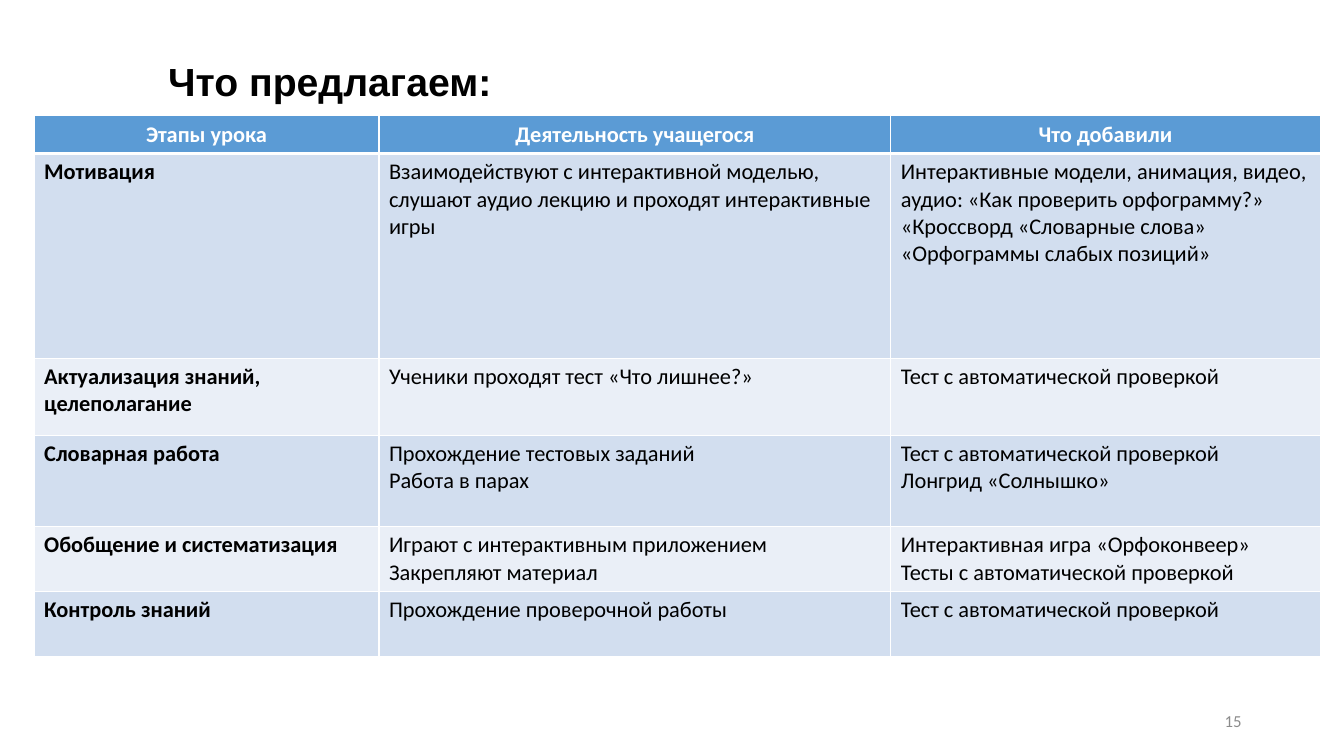
from lxml import etree
from pptx import Presentation
from pptx.dml.color import RGBColor
from pptx.enum import text
from pptx.oxml import ns
from pptx.util import Cm, Pt

BLACK = RGBColor(0x00, 0x00, 0x00)
WHITE = RGBColor(0xFF, 0xFF, 0xFF)
GRAY = RGBColor(0x8C, 0x8C, 0x8C)
HEADER_BLUE = RGBColor(0x5B, 0x9B, 0xD5)
BANDS = (RGBColor(0xEA, 0xEF, 0xF7), RGBColor(0xD2, 0xDE, 0xEF))

COLUMN_WIDTHS = (8.69, 12.9, 10.82)
ROW_HEIGHTS = (0.94, 5.16, 1.94, 2.3, 1.62, 1.64)
LESSON_STAGES = (
    ("Этапы урока", "Деятельность учащегося", "Что добавили"),
    ("Мотивация",
     "Взаимодействуют с интерактивной моделью, слушают аудио лекцию и проходят интерактивные игры",
     "Интерактивные модели, анимация, видео, аудио: «Как проверить орфограмму?»\n"
     "«Кроссворд «Словарные слова»\n«Орфограммы слабых позиций»"),
    ("Актуализация знаний, целеполагание",
     "Ученики проходят тест «Что лишнее?»",
     "Тест с автоматической проверкой"),
    ("Словарная работа",
     "Прохождение тестовых заданий\nРабота в парах",
     "Тест с автоматической проверкой\nЛонгрид «Солнышко»"),
    ("Обобщение и систематизация",
     "Играют с интерактивным приложением\nЗакрепляют материал",
     "Интерактивная игра «Орфоконвеер»\nТесты с автоматической проверкой"),
    ("Контроль знаний",
     "Прохождение проверочной работы",
     "Тест с автоматической проверкой"),
)


def write(frame, content, font_name, size, color, bold=False, align=text.PP_ALIGN.LEFT):
    """Fill a text frame and format all of its runs alike."""
    frame.text = content
    frame.word_wrap = True
    for paragraph in frame.paragraphs:
        paragraph.alignment = align
        for run in paragraph.runs:
            run.font.name = font_name
            run.font.size = Pt(size)
            run.font.bold = bold
            run.font.color.rgb = color


def add_label(slide, box, content, *style, **options):
    """Add a vertically centred text box and return its frame."""
    frame = slide.shapes.add_textbox(*(Cm(length) for length in box)).text_frame
    frame.vertical_anchor = text.MSO_ANCHOR.MIDDLE
    write(frame, content, *style, **options)
    return frame


def set_borders(cell, top, bottom):
    """Draw white cell borders, with top and bottom widths in points."""
    properties = cell._tc.get_or_add_tcPr()
    for side, width in (("L", 1), ("R", 1), ("T", top), ("B", bottom)):
        line = etree.SubElement(properties, ns.qn(f"a:ln{side}"), w=str(Pt(width)))
        fill = etree.SubElement(line, ns.qn("a:solidFill"))
        etree.SubElement(fill, ns.qn("a:srgbClr"), val=str(WHITE))


def style_cell(cell, content, row, column):
    """Write one cell as a header, a stage name or a description."""
    header = row == 0
    set_borders(cell, 3 if row == 1 else 1, 3 if header else 1)
    cell.fill.solid()
    cell.fill.fore_color.rgb = HEADER_BLUE if header else BANDS[row % 2]
    write(cell.text_frame, content, "Calibri", 16, WHITE if header else BLACK,
          bold=header or column == 0,
          align=text.PP_ALIGN.CENTER if header else text.PP_ALIGN.LEFT)


def add_stage_table(slide):
    """Add the table of lesson stages."""
    stages = slide.shapes.add_table(
        len(ROW_HEIGHTS), len(COLUMN_WIDTHS), Cm(0.86), Cm(2.92),
        Cm(sum(COLUMN_WIDTHS)), Cm(sum(ROW_HEIGHTS))).table
    for column, width in zip(stages.columns, COLUMN_WIDTHS):
        column.width = Cm(width)
    for row, height in zip(stages.rows, ROW_HEIGHTS):
        row.height = Cm(height)
    for row, contents in enumerate(LESSON_STAGES):
        for column, content in enumerate(contents):
            style_cell(stages.cell(row, column), content, row, column)


def main():
    """Build the slide and save it."""
    deck = Presentation()
    deck.slide_width, deck.slide_height = Cm(33.87), Cm(19.05)
    slide = deck.slides.add_slide(deck.slide_layouts[6])
    add_stage_table(slide)
    add_label(slide, (23.92, 17.66, 7.62, 1.01), "15", "Calibri", 12, GRAY,
              align=text.PP_ALIGN.RIGHT)
    title = add_label(slide, (3.99, 0.81, 27.97, 2.62), "Что предлагаем:",
                      "Arial", 28, BLACK, bold=True)
    title.paragraphs[0].line_spacing = 0.9
    deck.save("out.pptx")


if __name__ == "__main__":
    main()
